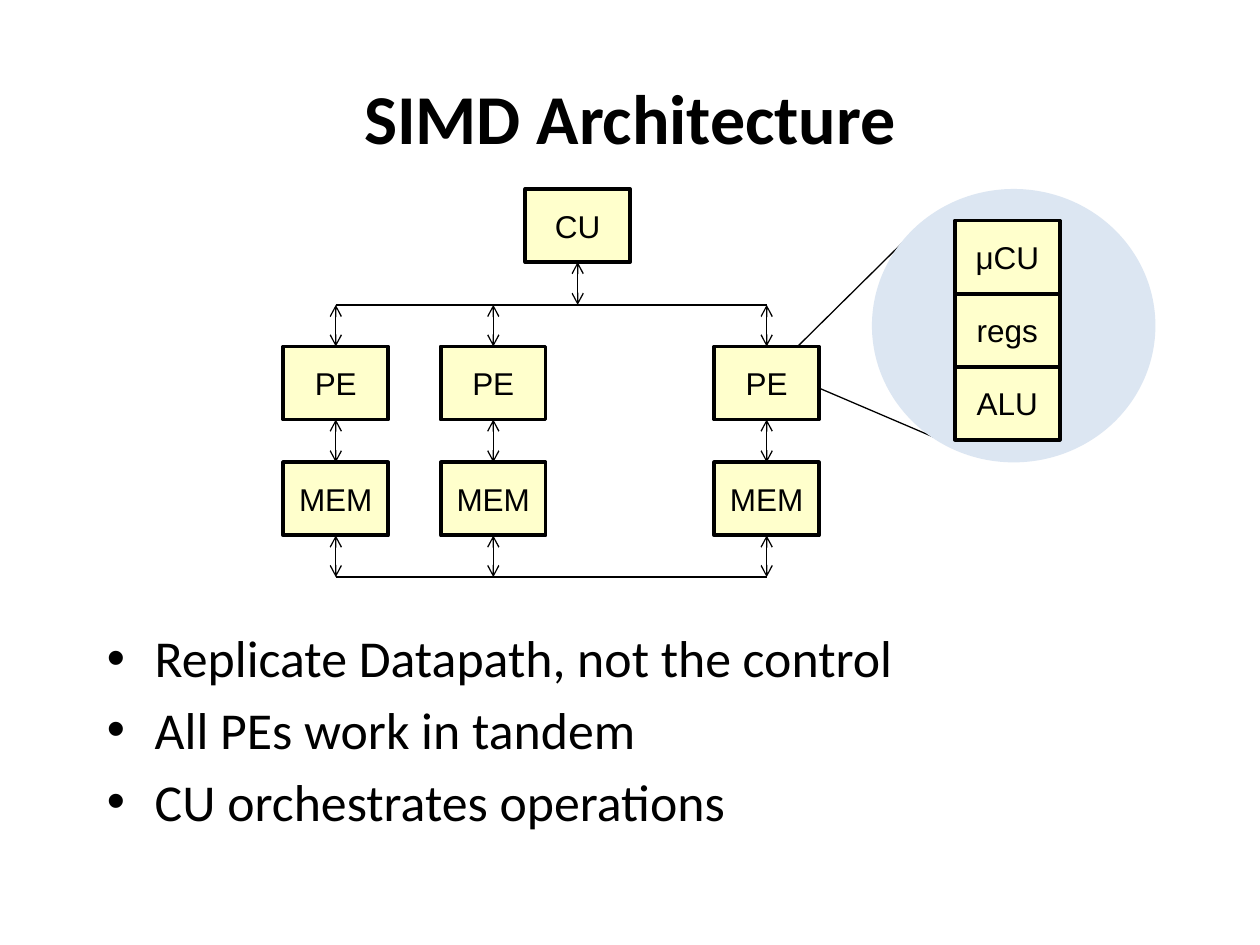
from lxml import etree
from pptx import Presentation
from pptx.dml.color import RGBColor
from pptx.enum.shapes import MSO_CONNECTOR, MSO_SHAPE
from pptx.enum.text import MSO_ANCHOR, PP_ALIGN
from pptx.oxml.ns import qn
from pptx.util import Inches, Pt

RECT, OVAL = MSO_SHAPE.RECTANGLE, MSO_SHAPE.OVAL
STRAIGHT = MSO_CONNECTOR.STRAIGHT
CENTER, LEFT = PP_ALIGN.CENTER, PP_ALIGN.LEFT
MIDDLE, TOP = MSO_ANCHOR.MIDDLE, MSO_ANCHOR.TOP

COLORS = {"ink": "000000", "box": "FFFFCC", "zoom": "DCE6F2"}
FORMATS = {
    "title": {"name": "Calibri", "size": Pt(40), "bold": True},
    "bullet": {"name": "Calibri", "size": Pt(29.6)},
    "box": {"name": "Arial", "size": Pt(18)},
}

# Diagram grid, in inches
BOX_W, BOX_H = 0.83, 0.58
HALF = BOX_W / 2
CU_LEFT, CU_TOP = 4.17, 1.5
PE_LEFTS = [2.25, 3.5, 5.67]
PE_TOP, MEM_TOP = 2.75, 3.67
BUS_TOP, BUS_BOTTOM = 2.42, 4.58
ZOOM_LEFT, ZOOM_TOP = 7.58, 1.75


def rgb(key):
    return RGBColor.from_string(COLORS[key])


class SlideBuilder:
    def __init__(self, prs):
        self.slide = prs.slides.add_slide(prs.slide_layouts[5])

    def add_text(self, p, text, style, align):
        p.alignment = align
        r = p.add_run()
        r.text = text
        for key, value in FORMATS[style].items():
            setattr(r.font, key, value)
        r.font.color.rgb = rgb("ink")

    def title(self, text, *at):
        sp = self.slide.shapes.title
        sp.left, sp.top, sp.width, sp.height = map(Inches, at)
        sp.text_frame.vertical_anchor = MIDDLE
        self.add_text(sp.text_frame.paragraphs[0], text, "title", CENTER)

    def bullets(self, lines, *at):
        tf = self.slide.shapes.add_textbox(*map(Inches, at)).text_frame
        tf.word_wrap, tf.vertical_anchor = True, TOP
        for i, line in enumerate(lines):
            p = tf.add_paragraph() if i else tf.paragraphs[0]
            p.space_before = Pt(5.5)
            self.add_text(p, line, "bullet", LEFT)
            pPr = p._p.get_or_add_pPr()
            pPr.set("marL", str(Inches(0.38)))
            pPr.set("indent", str(Inches(-0.38)))
            etree.SubElement(pPr, qn("a:buFont")).set("typeface", "Arial")
            etree.SubElement(pPr, qn("a:buChar")).set("char", "•")

    def shape(self, kind, fill, *at):
        sp = self.slide.shapes.add_shape(kind, *map(Inches, at))
        sp.shadow.inherit = False
        sp.fill.solid()
        sp.fill.fore_color.rgb = rgb(fill)
        sp.line.fill.background()
        return sp

    def box(self, text, left, top):
        sp = self.shape(RECT, "box", left, top, BOX_W, BOX_H)
        sp.line.color.rgb = rgb("ink")
        sp.line.width = Pt(2.25)
        tf = sp.text_frame
        tf.word_wrap, tf.vertical_anchor = False, MIDDLE
        self.add_text(tf.paragraphs[0], text, "box", CENTER)

    def line(self, x1, y1, x2, y2, arrows=False):
        cn = self.slide.shapes.add_connector(STRAIGHT, *map(Inches, (x1, y1, x2, y2)))
        cn.line.color.rgb = rgb("ink")
        cn.line.width = Pt(0.75)
        spPr = cn._element.spPr
        if arrows:
            ln = spPr.find(qn("a:ln"))
            for end in ("a:headEnd", "a:tailEnd"):
                etree.SubElement(ln, qn(end)).set("type", "arrow")
        etree.SubElement(spPr, qn("a:effectLst"))

    def link(self, x, top, bottom):
        self.line(x, top, x, bottom, arrows=True)


def main():
    prs = Presentation()
    prs.slide_width, prs.slide_height = Inches(10), Inches(7.5)
    s = SlideBuilder(prs)

    # Text
    s.title("SIMD Architecture", 0.5, 0.3, 9, 1.25)
    s.bullets(["Replicate Datapath, not the control",
               "All PEs work in tandem",
               "CU orchestrates operations"], 0.75, 4.92, 8.5, 1.75)

    # Control unit
    s.box("CU", CU_LEFT, CU_TOP)
    s.link(CU_LEFT + HALF, CU_TOP + BOX_H, BUS_TOP)

    # Processing elements with their memories
    for left in PE_LEFTS:
        x = left + HALF
        s.box("PE", left, PE_TOP)
        s.box("MEM", left, MEM_TOP)
        s.link(x, BUS_TOP, PE_TOP)
        s.link(x, PE_TOP + BOX_H, MEM_TOP)
        s.link(x, MEM_TOP + BOX_H, BUS_BOTTOM)

    # Buses
    for y in (BUS_TOP, BUS_BOTTOM):
        s.line(PE_LEFTS[0] + HALF, y, PE_LEFTS[-1] + HALF, y)

    # Zoom into one processing element
    s.line(6.33, 2.75, 7.17, 1.92)
    s.line(6.5, 3.08, 7.67, 3.58)
    s.shape(OVAL, "zoom", 6.92, 1.5, 2.25, 2.17)
    for i, part in enumerate(["μCU", "regs", "ALU"]):
        s.box(part, ZOOM_LEFT, ZOOM_TOP + i * BOX_H)

    prs.save("out.pptx")


if __name__ == "__main__":
    main()
